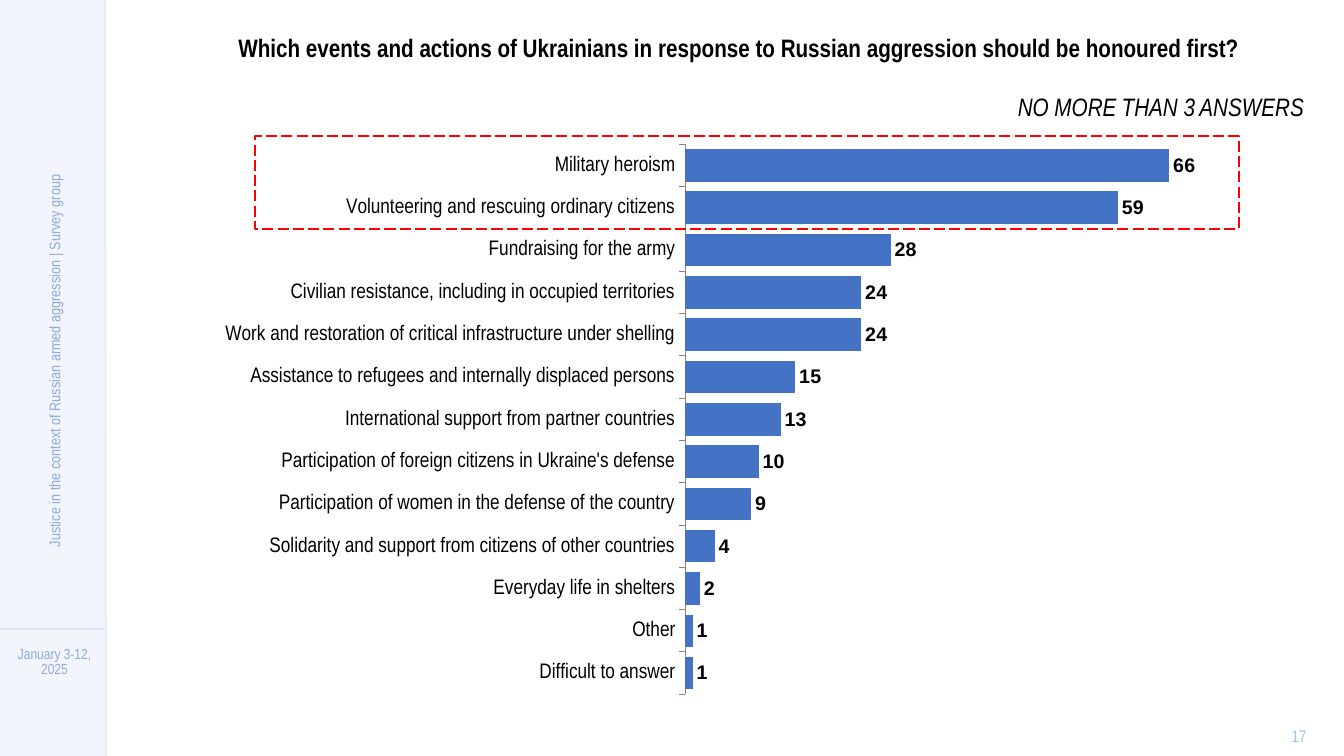
from dataclasses import dataclass

from lxml import etree
from pptx import Presentation
from pptx import util as u
from pptx.chart.data import CategoryChartData
from pptx.dml.color import RGBColor
from pptx.enum import chart as ch
from pptx.enum import dml, shapes, text
from pptx.oxml import parse_xml
from pptx.oxml.ns import nsdecls, qn

EMU_PER_INCH = 914400
PX_PER_INCH = 100.8


@dataclass(frozen=True)
class Theme:
    narrow: str = "Arial Narrow"
    wide: str = "Arial"
    ink: str = "000000"
    sidebar: str = "DAE3F3"
    edge: str = "DEEBF7"
    caption: str = "8FAADC"
    number: str = "9DC3E6"
    bar: str = "4472C4"
    axis: str = "868686"
    highlight: str = "FF0000"
    title_size: int = 18
    category_size: int = 15
    value_size: int = 14
    number_size: int = 12
    caption_size: int = 11
    date_size: float = 10.5


THEME = Theme()

ANSWERS = [
    ("Military heroism", 66),
    ("Volunteering and rescuing ordinary citizens", 59),
    ("Fundraising for the army", 28),
    ("Civilian resistance, including in occupied territories", 24),
    ("Work and restoration of critical infrastructure under shelling", 24),
    ("Assistance to refugees and internally displaced persons", 15),
    ("International support from partner countries", 13),
    ("Participation of foreign citizens in Ukraine's defense", 10),
    ("Participation of women in the defense of the country", 9),
    ("Solidarity and support from citizens of other countries", 4),
    ("Everyday life in shelters", 2),
    ("Other", 1),
    ("Difficult to answer", 1),
]


def px(*lengths):
    return [u.Emu(round(n * EMU_PER_INCH / PX_PER_INCH)) for n in lengths]


def rgb(color):
    return RGBColor.from_string(color)


def style(font, size, color, name=THEME.narrow, bold=False, italic=False):
    font.size = u.Pt(size)
    font.color.rgb = rgb(color)
    font.name = name
    font.bold = bold
    font.italic = italic


def add_box(slide, box, fill=None, opacity=100, outline=None):
    panel = slide.shapes.add_shape(shapes.MSO_SHAPE.RECTANGLE, *px(*box))
    panel.shadow.inherit = False
    if fill:
        panel.fill.solid()
        panel.fill.fore_color.rgb = rgb(fill)
        tint = panel.element.spPr.find(".//" + qn("a:srgbClr"))
        etree.SubElement(tint, qn("a:alpha")).set("val", str(opacity * 1000))
    else:
        panel.fill.background()
    if outline:
        panel.line.color.rgb = rgb(outline)
        panel.line.width = u.Pt(1)
        panel.line.dash_style = dml.MSO_LINE.LONG_DASH
    else:
        panel.line.fill.background()


def add_rule(slide, ends, color):
    rule = slide.shapes.add_connector(shapes.MSO_CONNECTOR.STRAIGHT, *px(*ends))
    rule.line.color.rgb = rgb(color)
    rule.line.width = u.Pt(1)
    etree.SubElement(rule.element.spPr, qn("a:effectLst"))


def add_text(slide, box, lines, anchor=text.MSO_ANCHOR.MIDDLE, rotation=0):
    label = slide.shapes.add_textbox(*px(*box))
    label.rotation = rotation
    frame = label.text_frame
    frame.word_wrap = True
    frame.vertical_anchor = anchor
    frame.text = "\n".join(line["words"] for line in lines)
    for paragraph, line in zip(frame.paragraphs, lines):
        paragraph.alignment = line.get("align", text.PP_ALIGN.CENTER)
        if "leading" in line:
            paragraph.line_spacing = u.Pt(line["leading"])
        if "before" in line:
            paragraph.space_before = u.Pt(line["before"])
        for run in paragraph.runs:
            style(run.font, line["size"], line["color"],
                  bold=line.get("bold", False), italic=line.get("italic", False))


def place_plot(chart, x, y, w, h):
    layout = parse_xml(
        f'<c:layout {nsdecls("c")}><c:manualLayout>'
        '<c:layoutTarget val="inner"/><c:xMode val="edge"/><c:yMode val="edge"/>'
        f'<c:x val="{x}"/><c:y val="{y}"/><c:w val="{w}"/><c:h val="{h}"/>'
        '</c:manualLayout></c:layout>')
    plot_area = chart.element.find(".//" + qn("c:plotArea"))
    for old_layout in plot_area.findall(qn("c:layout")):
        plot_area.remove(old_layout)
    plot_area.insert(0, layout)


def add_bars(slide, box, answers):
    data = CategoryChartData(number_format="0")
    data.categories = [answer for answer, share in answers]
    data.add_series("Series 1", [share for answer, share in answers])
    chart = slide.shapes.add_chart(
        ch.XL_CHART_TYPE.BAR_CLUSTERED, *px(*box), data).chart
    chart.has_legend = False
    chart.has_title = False
    style(chart.font, THEME.title_size, THEME.ink, THEME.wide)
    place_plot(chart, 0.486, 0.15, 0.43, 0.831)

    answer_axis = chart.category_axis
    answer_axis.reverse_order = True
    answer_axis.has_major_gridlines = False
    answer_axis.major_tick_mark = ch.XL_TICK_MARK.OUTSIDE
    answer_axis.format.line.color.rgb = rgb(THEME.axis)
    style(answer_axis.tick_labels.font, THEME.category_size, THEME.ink)

    share_axis = chart.value_axis
    share_axis.minimum_scale = 0
    share_axis.maximum_scale = 70
    share_axis.has_major_gridlines = False
    share_axis.visible = False

    bars = chart.plots[0]
    bars.gap_width = 30
    bars.vary_by_categories = False
    shares = bars.series[0]
    shares.format.fill.solid()
    shares.format.fill.fore_color.rgb = rgb(THEME.bar)
    labels = shares.data_labels
    labels.show_value = True
    labels.number_format = "0"
    labels.number_format_is_linked = False
    labels.position = ch.XL_LABEL_POSITION.OUTSIDE_END
    style(labels.font, THEME.value_size, THEME.ink, THEME.wide, bold=True)


def add_sidebar(slide):
    add_box(slide, (0, 0, 106, 756), fill=THEME.sidebar, opacity=33)
    add_rule(slide, (106, 629, 0, 629), THEME.sidebar)
    add_text(slide, (0, 647, 109, 30), [
        dict(words="January 3-12, 2025", size=THEME.date_size,
             color=THEME.caption, leading=11)])
    add_rule(slide, (105, 0, 106, 756), THEME.edge)
    add_text(slide, (-208, 346, 515, 30), [
        dict(words="Justice in the context of Russian armed aggression | Survey group",
             size=THEME.caption_size, color=THEME.caption, leading=20)],
        rotation=270)


def main():
    deck = Presentation()
    deck.slide_width, deck.slide_height = px(1344, 756)
    slide = deck.slides.add_slide(deck.slide_layouts[6])
    add_sidebar(slide)
    add_text(slide, (1266, 725, 66, 22), [
        dict(words="17", size=THEME.number_size, color=THEME.number)])
    add_bars(slide, (105, 45, 1194, 662), ANSWERS)
    add_box(slide, (255, 136, 984, 93), outline=THEME.highlight)
    add_text(slide, (164, 27, 1150, 102), [
        dict(words="Which events and actions of Ukrainians in response to "
                   "Russian aggression should be honoured first?",
             size=THEME.title_size, color=THEME.ink, bold=True),
        dict(words="NO MORE THAN 3 ANSWERS", size=THEME.title_size,
             color=THEME.ink, italic=True, before=21,
             align=text.PP_ALIGN.RIGHT)],
        anchor=text.MSO_ANCHOR.TOP)
    deck.save("out.pptx")


if __name__ == "__main__":
    main()
